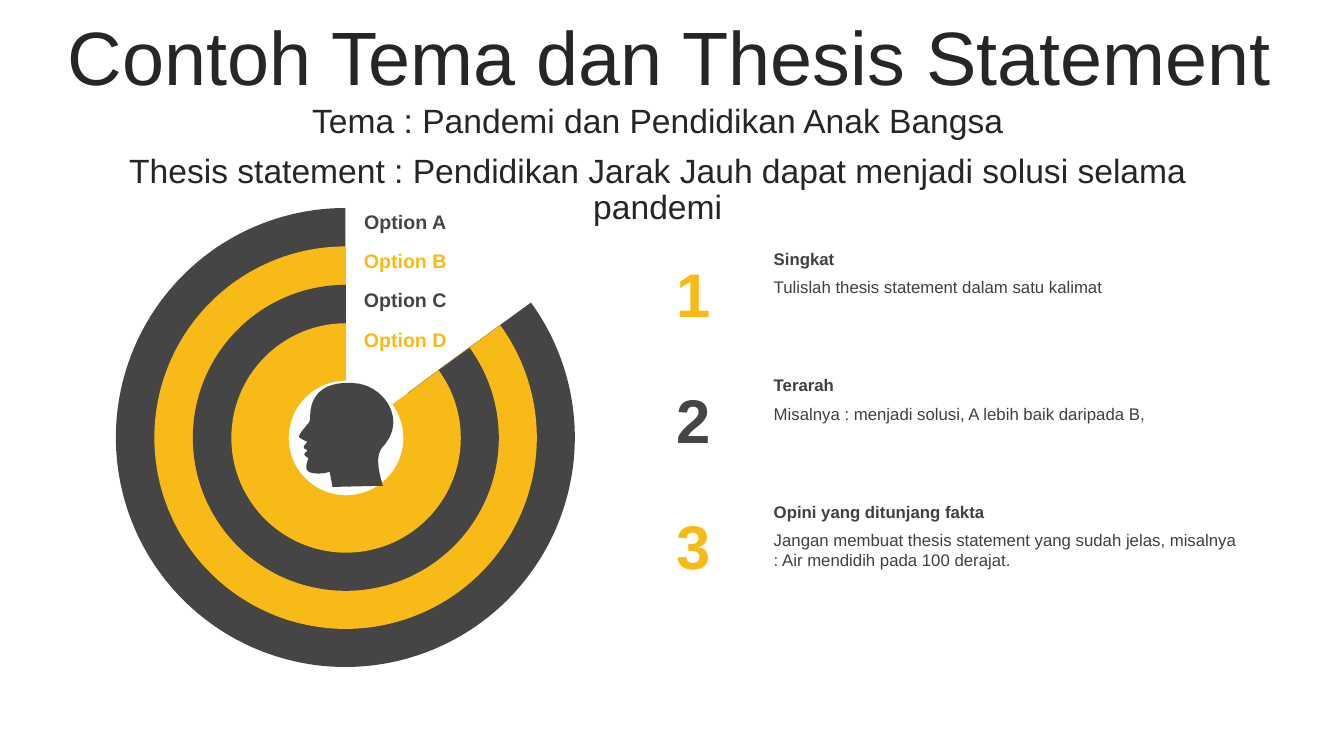
import pptx
import pptx.chart.data
import pptx.dml.color
import pptx.enum.chart
import pptx.enum.text
import pptx.oxml
import pptx.oxml.ns
import pptx.util
from pptx.util import Cm

CHARCOAL = pptx.dml.color.RGBColor(0x45, 0x45, 0x45)
AMBER = pptx.dml.color.RGBColor(0xF8, 0xBA, 0x16)
HEADLINE = pptx.dml.color.RGBColor(0x26, 0x26, 0x26)
BODY = pptx.dml.color.RGBColor(0x40, 0x40, 0x40)
BLACK = pptx.dml.color.RGBColor(0, 0, 0)
FONT = "Arial"
CENTER = pptx.enum.text.PP_ALIGN.CENTER
LEFT = pptx.enum.text.PP_ALIGN.LEFT
MIDDLE = pptx.enum.text.MSO_ANCHOR.MIDDLE
TOP = pptx.enum.text.MSO_ANCHOR.TOP

RING_CENTER = (8.74, 11.05)
RINGS = [
    ("Option A", 12, 87, CHARCOAL),
    ("Option B", 10, 84, AMBER),
    ("Option C", 8, 80, CHARCOAL),
    ("Option D", 6, 74, AMBER),
]
PLOT_LAYOUT = {"x": 0.015, "y": 0.011, "w": 0.964, "h": 0.974}

TIPS = [
    ("Singkat", "Tulislah thesis statement dalam satu kalimat", 0.76, AMBER),
    ("Terarah", "Misalnya : menjadi solusi, A lebih baik daripada B,", 0.76, CHARCOAL),
    ("Opini yang ditunjang fakta",
     "Jangan membuat thesis statement yang sudah jelas, misalnya : Air mendidih pada 100 derajat.",
     1.27, AMBER),
]
TIP_STEP = 3.18
LABEL_STEP = 0.99

HEAD_START = (8.86, 9.65)
HEAD_OUTLINE = [
    [(8.33, 9.63), (8.0, 9.8), (7.87, 10.16)],
    [(7.77, 10.46), (7.87, 10.57), (7.75, 10.69)],
    [(7.65, 10.82), (7.52, 10.95), (7.54, 11.02)],
    [(7.59, 11.05), (7.65, 11.1), (7.75, 11.13)],
    [(7.72, 11.18), (7.62, 11.25), (7.67, 11.3)],
    [(7.75, 11.35)],
    [(7.72, 11.4), (7.67, 11.4), (7.67, 11.46)],
    [(7.7, 11.51), (7.77, 11.53), (7.77, 11.56)],
    [(7.72, 11.68), (7.7, 11.81), (7.75, 11.86)],
    [(7.82, 11.94), (8.08, 11.96), (8.31, 11.89)],
    [(8.38, 12.27)],
    [(9.65, 12.24)],
    [(9.47, 11.66), (9.5, 11.38), (9.7, 11.2)],
    [(10.26, 10.52), (9.63, 9.65), HEAD_START],
]
CURVE_STEPS = 12


def write_text(frame, text, size, color, bold=False, align=CENTER, anchor=TOP, line_spacing=None):
    frame.text = text
    frame.word_wrap = True
    frame.auto_size = pptx.enum.text.MSO_AUTO_SIZE.NONE
    frame.vertical_anchor = anchor
    for paragraph in frame.paragraphs:
        paragraph.alignment = align
        if line_spacing:
            paragraph.line_spacing = line_spacing
            paragraph.space_before = pptx.util.Pt(10)
        for run in paragraph.runs:
            run.font.name = FONT
            run.font.size = pptx.util.Pt(size)
            run.font.bold = bold
            run.font.color.rgb = color


def add_text(slide, box, text, size, color, **style):
    frame = slide.shapes.add_textbox(*map(Cm, box)).text_frame
    write_text(frame, text, size, color, **style)
    return frame


def add_title(slide):
    title = slide.shapes.title
    title.left, title.top, title.width, title.height = map(Cm, (0.79, 0.53, 32.16, 2.01))
    write_text(title.text_frame, "Contoh Tema dan Thesis Statement", 54, HEADLINE,
               anchor=MIDDLE, line_spacing=0.9)


def fix_plot_area(chart):
    qn = pptx.oxml.ns.qn
    namespaces = pptx.oxml.ns.nsdecls("c", "a")
    chart_space = chart.element
    plot_area = chart_space.find(".//" + qn("c:plotArea"))
    for layout in plot_area.findall(qn("c:layout")):
        plot_area.remove(layout)
    modes = "".join(f'<c:{axis}Mode val="edge"/>' for axis in "xy")
    values = "".join(f'<c:{key} val="{value}"/>' for key, value in PLOT_LAYOUT.items())
    plot_area.insert(0, pptx.oxml.parse_xml(
        f'<c:layout {namespaces}><c:manualLayout><c:layoutTarget val="inner"/>'
        f"{modes}{values}</c:manualLayout></c:layout>"))
    chart_space.find(qn("c:chart")).addnext(pptx.oxml.parse_xml(
        f"<c:spPr {namespaces}><a:noFill/><a:ln><a:noFill/></a:ln></c:spPr>"))


def add_ring(slide, diameter, hole, color):
    data = pptx.chart.data.CategoryChartData()
    data.categories = ["1", "2"]
    data.add_series("Series 1", (15, 85))
    left, top = (middle - diameter / 2 for middle in RING_CENTER)
    chart = slide.shapes.add_chart(
        pptx.enum.chart.XL_CHART_TYPE.DOUGHNUT,
        Cm(left), Cm(top), Cm(diameter), Cm(diameter), data).chart
    chart.has_legend = False
    chart.has_title = False
    chart.font.name = FONT
    chart.font.size = pptx.util.Pt(18)
    chart.font.color.rgb = BLACK
    plot = chart.plots[0]
    plot.vary_by_categories = True
    gap, arc = (plot.series[0].points[index].format for index in range(2))
    gap.fill.background()
    arc.fill.solid()
    arc.fill.fore_color.rgb = color
    for part in (gap, arc):
        part.line.fill.background()
    chart.element.find(".//" + pptx.oxml.ns.qn("c:holeSize")).set("val", str(hole))
    fix_plot_area(chart)


def curve_points(start, first, second, end):
    for step in range(1, CURVE_STEPS + 1):
        t = step / CURVE_STEPS
        weights = ((1 - t) ** 3, 3 * t * (1 - t) ** 2, 3 * t * t * (1 - t), t ** 3)
        yield tuple(sum(w * point[axis] for w, point in zip(weights, (start, first, second, end)))
                    for axis in range(2))


def add_head(slide):
    outline = [HEAD_START]
    for segment in HEAD_OUTLINE:
        outline.extend(curve_points(outline[-1], *segment) if len(segment) == 3 else segment)
    vertices = [(Cm(x), Cm(y)) for x, y in outline]
    builder = slide.shapes.build_freeform(*vertices[0])
    builder.add_line_segments(vertices[1:], close=True)
    head = builder.convert_to_shape()
    head.shadow.inherit = False
    head.fill.solid()
    head.fill.fore_color.rgb = CHARCOAL
    head.line.fill.background()


def add_tip(slide, index, heading, advice, advice_height, color):
    offset = index * TIP_STEP
    add_text(slide, (15.75, 6.32 + offset, 3.45, 2.13), str(index + 1), 44, color, bold=True)
    for top, height, text, bold in ((6.86, advice_height, advice, False), (6.15, 0.76, heading, True)):
        frame = add_text(slide, (19.2, top + offset, 12.32, height), text, 12, BODY,
                         bold=bold, align=LEFT)
        frame.margin_left = frame.margin_right = Cm(0.3)


def main():
    presentation = pptx.Presentation()
    presentation.slide_width = Cm(33.87)
    presentation.slide_height = Cm(19.05)
    slide = presentation.slides.add_slide(presentation.slide_layouts.get_by_name("Title Only"))
    add_title(slide)
    add_text(slide, (2.06, 3.58, 29.03, 1.19),
             "Tema : Pandemi dan Pendidikan Anak Bangsa\n"
             "Thesis statement : Pendidikan Jarak Jauh dapat menjadi solusi selama pandemi",
             24, HEADLINE, anchor=MIDDLE, line_spacing=0.9)
    for option, diameter, hole, color in RINGS:
        add_ring(slide, diameter, hole, color)
    for index, tip in enumerate(TIPS):
        add_tip(slide, index, *tip)
    for index, (option, diameter, hole, color) in enumerate(RINGS):
        add_text(slide, (8.74, 5.16 + index * LABEL_STEP, 2.95, 0.86), option, 14, color, bold=True)
    add_head(slide)
    presentation.save("out.pptx")


if __name__ == "__main__":
    main()
